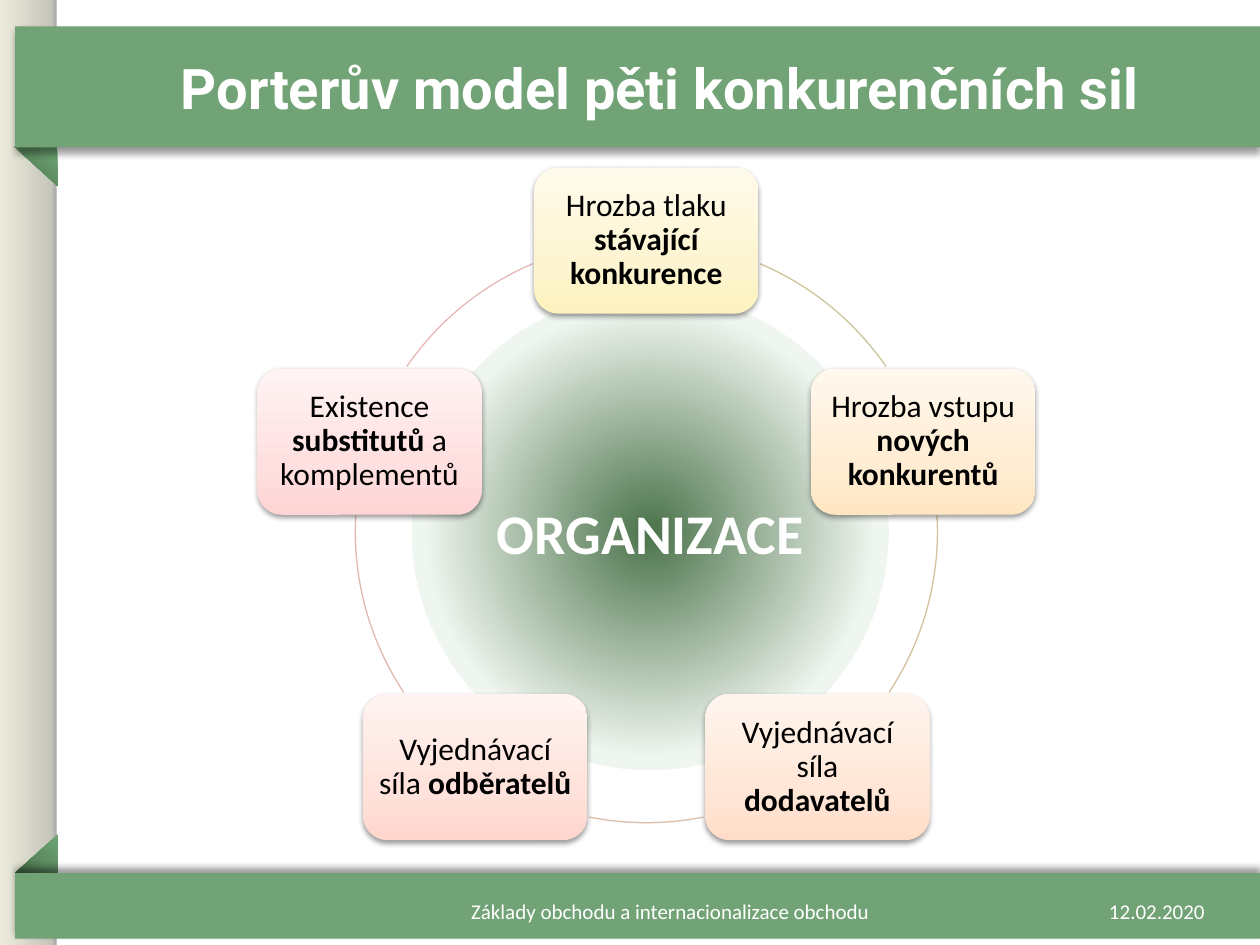
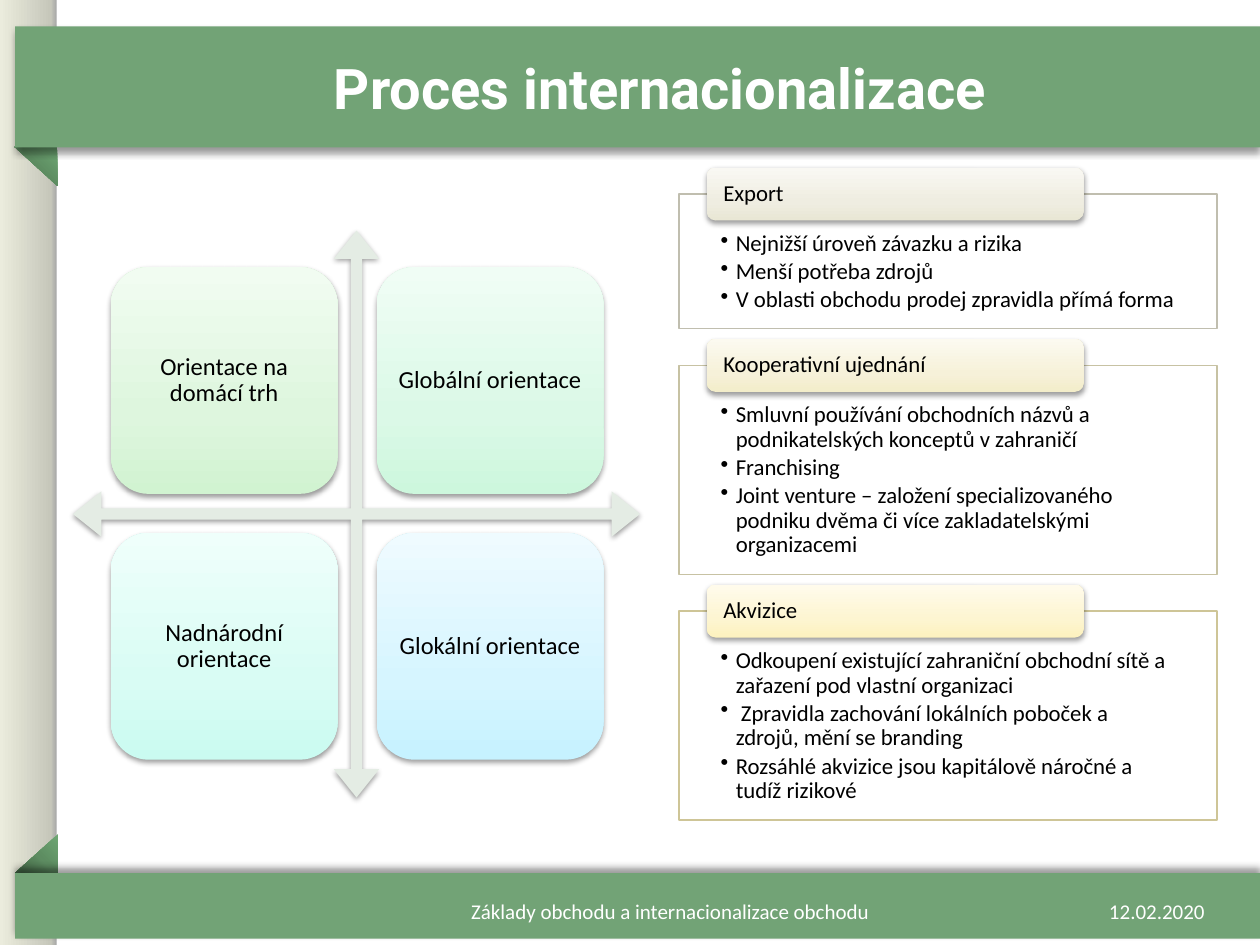
import math
from dataclasses import dataclass

import pptx
import pptx.util
import pptx.dml.color
import pptx.enum.shapes
import pptx.enum.text
import pptx.oxml
import pptx.oxml.ns

Inches = pptx.util.Inches
SHAPE = pptx.enum.shapes.MSO_SHAPE
ALIGN = pptx.enum.text.PP_ALIGN
ANCHOR = pptx.enum.text.MSO_ANCHOR

# ---------- Content ----------
FOOTER = "Základy obchodu a internacionalizace obchodu"
DATE = "12.02.2020"

FORCES_TITLE = "Porterův model pěti konkurenčních sil"
ORGANIZATION = "ORGANIZACE"
# Clockwise from the top; *bold*; gradient from bottom to top
FORCES = [
    ("Hrozba tlaku *stávající konkurence*", ("FDF2BF", "FDF5D1", "FFFBEC")),
    ("Hrozba vstupu *nových konkurentů*", ("FFE6C2", "FFEDD3", "FFF8EE")),
    ("Vyjednávací síla *dodavatelů*", ("FFDDC8", "FFE6D7", "FFF5EF")),
    ("Vyjednávací síla *odběratelů*", ("FFD7CE", "FFE2DB", "FFF4F1")),
    ("Existence *substitutů* a komplementů", ("FFD4D4", "FFE0E0", "FFF3F3")),
]
# Visible pieces of the ring: start and end in degrees from the top, colour
RING_ARCS = [
    (22.9, 55.4, "CEC597"),
    (86.8, 123.5, "D5C19E"),
    (168.7, 191.3, "DCBDA6"),
    (236.5, 273.2, "E2B9AE"),
    (304.6, 337.1, "E8B7B7"),
]

PROCESS_TITLE = "Proces internacionalizace"
ORIENTATIONS = [
    ("Orientace na domácí trh", ("D1F3D1", "DEF6DE", "F1FCF1")),
    ("Globální orientace", ("CDF7DD", "DBF9E7", "F0FDF5")),
    ("Nadnárodní orientace", ("CAFBF1", "D9FCF4", "EFFFFB")),
    ("Glokální orientace", ("C6F2FF", "D6F5FF", "EFFBFF")),
]
# Label, label gradient, outline, panel height, points
ENTRY_FORMS = [
    ("Export", ("E9E7D5", "EFEDE1", "F9F8F3"), "C0BEAF", 1.07, [
        "Nejnižší úroveň závazku a rizika",
        "Menší potřeba zdrojů",
        "V oblasti obchodu prodej zpravidla přímá forma",
    ]),
    ("Kooperativní ujednání", ("F3EDCA", "F6F1D9", "FCFAF0"), "C7C2A3", 1.66, [
        "Smluvní používání obchodních názvů a podnikatelských konceptů v zahraničí",
        "Franchising",
        "Joint venture – založení specializovaného podniku dvěma či více "
        "zakladatelskými organizacemi",
    ]),
    ("Akvizice", ("FDF2BF", "FDF5D1", "FFFBEC"), "CEC597", 1.66, [
        "Odkoupení existující zahraniční obchodní sítě a zařazení pod vlastní organizaci",
        " Zpravidla zachování lokálních poboček a zdrojů, mění se branding",
        "Rozsáhlé akvizice jsou kapitálově náročné a tudíž rizikové",
    ]),
]


# ---------- Theme ----------
@dataclass(frozen=True)
class Theme:
    title_font: str = "Roboto"
    body_font: str = "Calibri"
    title_size: int = 32
    force_size: int = 18
    orientation_size: int = 14
    form_size: int = 13
    footer_size: int = 12
    white: str = "FFFFFF"
    black: str = "000000"
    band: str = "72A376"
    arrows: str = "E4ECE4"
    spine: tuple = ((0, "A6A6A6"), (10, "C6C7BA"), (100, "EBECDD"))
    fold: tuple = ((0, "416344"), (50, "5D8C61"), (100, "6EA773"))
    core: tuple = ((0, "4B734B"), (67, "EFF5EF"), (100, "FFFFFF"))
    # Shadows: opacity %, blur pt, distance pt, direction in degrees
    band_shadow: tuple = (40, 4, 3, 90)
    footer_shadow: tuple = (40, 4, 3, 270)
    card_shadow: tuple = (38, 3.1, 1.6, 90)


THEME = Theme()


# ---------- Drawing helpers ----------
def rgb(value):
    return pptx.dml.color.RGBColor.from_string(value)


def xml(markup):
    head, rest = markup.split(" ", 1) if " " in markup.split(">")[0] else markup.split(">", 1)
    joint = " " if " " in markup.split(">")[0] else ">"
    return pptx.oxml.parse_xml(f"{head} {pptx.oxml.ns.nsdecls('a')}{joint}{rest}")


def set_gradient(shape, stops, angle=None, focus=None):
    """Linear at an angle, or circular around focus (left, top, right, bottom %)."""
    shape.fill.gradient()
    gradient = shape._element.spPr.find(pptx.oxml.ns.qn("a:gradFill"))
    gradient.clear()
    marks = "".join(f'<a:gs pos="{at * 1000}"><a:srgbClr val="{color}"/></a:gs>'
                    for at, color in stops)
    gradient.append(xml(f"<a:gsLst>{marks}</a:gsLst>"))
    if focus:
        sides = " ".join(f'{side}="{part * 1000}"' for side, part in zip("ltrb", focus))
        gradient.append(xml(f'<a:path path="circle"><a:fillToRect {sides}/></a:path>'))
    else:
        gradient.append(xml(f'<a:lin ang="{angle * 60000}" scaled="0"/>'))


def set_shadow(shape, shadow):
    opacity, blur, distance, direction = shadow
    shape._element.spPr.find(pptx.oxml.ns.qn("a:effectLst")).append(xml(
        f'<a:outerShdw blurRad="{int(blur * 12700)}" dist="{int(distance * 12700)}" '
        f'dir="{direction * 60000}" rotWithShape="0"><a:srgbClr val="{THEME.black}">'
        f'<a:alpha val="{opacity * 1000}"/></a:srgbClr></a:outerShdw>'))


def add_part(slide, kind, box, fill=None, line=None, shadow=None):
    part = slide.shapes.add_shape(kind, *map(Inches, box))
    part.shadow.inherit = False
    if fill:
        part.fill.solid()
        part.fill.fore_color.rgb = rgb(fill)
    if line:
        part.line.color.rgb = rgb(line)
        part.line.width = pptx.util.Pt(0.75)
    else:
        part.line.fill.background()
    if shadow:
        set_shadow(part, shadow)
    return part


def write(shape, texts, size, color=THEME.black, font=THEME.body_font, bold=None,
          align=ALIGN.CENTER, anchor=ANCHOR.MIDDLE, margins=None, spacing=None,
          bullets=False):
    """One paragraph per text; words between asterisks are bold."""
    frame = shape.text_frame
    frame.word_wrap = True
    frame.vertical_anchor = anchor
    if margins:
        (frame.margin_left, frame.margin_top,
         frame.margin_right, frame.margin_bottom) = map(Inches, margins)
    for index, text in enumerate(texts):
        paragraph = frame.add_paragraph() if index else frame.paragraphs[0]
        paragraph.alignment = align
        if spacing:
            paragraph.line_spacing = spacing
        if bullets:
            paragraph.space_after = pptx.util.Pt(2)
            properties = paragraph._p.get_or_add_pPr()
            properties.set("marL", str(Inches(0.12)))
            properties.set("indent", str(-Inches(0.12)))
            properties.append(xml('<a:buChar char="•"/>'))
        paragraph.font.name = font
        paragraph.font.size = pptx.util.Pt(size)
        paragraph.font.color.rgb = rgb(color)
        paragraph.font.bold = bold
        for position, words in enumerate(text.split("*")):
            if words:
                run = paragraph.add_run()
                run.text = words
                if position % 2:
                    run.font.bold = True


def add_card(slide, box, text, colors, size, margins, align=ALIGN.CENTER):
    card = add_part(slide, SHAPE.ROUNDED_RECTANGLE, box, shadow=THEME.card_shadow)
    set_gradient(card, zip((0, 35, 100), colors), angle=270)
    write(card, [text], size, align=align, margins=margins, spacing=0.9)


def add_label(slide, box, text, size, **style):
    label = slide.shapes.add_textbox(*map(Inches, box))
    write(label, [text], size, color=THEME.white, **style)


def add_base_slide(deck, title):
    """Spine, folded bands, title and footer."""
    slide = deck.slides.add_slide(deck.slide_layouts[6])
    spine = add_part(slide, SHAPE.RECTANGLE, (0, 0, 0.45, 7.5))
    set_gradient(spine, THEME.spine, angle=180)
    for box, rotation in (((0.13, 1.15, 0.31, 0.34), 270), ((0.12, 6.62, 0.34, 0.31), 0)):
        fold = add_part(slide, SHAPE.RIGHT_TRIANGLE, box)
        fold.rotation = rotation
        fold._element.spPr.xfrm.set("flipH", "1")
        set_gradient(fold, THEME.fold, focus=(0, 100, 100, 0))
    add_part(slide, SHAPE.RECTANGLE, (0.12, 0.21, 9.88, 0.96), THEME.band,
             shadow=THEME.band_shadow)
    add_part(slide, SHAPE.RECTANGLE, (0.12, 6.93, 9.88, 0.52), THEME.band,
             shadow=THEME.footer_shadow)
    add_label(slide, (0.87, 0.21, 8.74, 0.96), title, THEME.title_size,
              font=THEME.title_font, bold=True)
    add_label(slide, (7.33, 7.03, 2.33, 0.4), DATE, THEME.footer_size, align=ALIGN.RIGHT)
    add_label(slide, (3.46, 7.03, 3.72, 0.4), FOOTER, THEME.footer_size)
    return slide


# ---------- Slides ----------
def build_forces(deck):
    slide = add_base_slide(deck, FORCES_TITLE)
    center_x, center_y, radius = 5.13, 4.22, 2.31
    card_width, card_height = 1.78, 1.16

    def on_ring(degrees):
        angle = math.radians(degrees)
        return center_x + radius * math.sin(angle), center_y - radius * math.cos(angle)

    # Organization in the middle
    core = add_part(slide, SHAPE.OVAL, (3.27, 2.33, 3.78, 3.78))
    set_gradient(core, THEME.core, focus=(50, 50, 50, 50))
    write(core, [ORGANIZATION], THEME.title_size, color=THEME.white, bold=True)

    # Ring
    steps = 24
    for start, end, color in RING_ARCS:
        points = [tuple(map(Inches, on_ring(start + (end - start) * step / steps)))
                  for step in range(steps + 1)]
        builder = slide.shapes.build_freeform(*points[0])
        builder.add_line_segments(points[1:], close=False)
        arc = builder.convert_to_shape()
        arc.shadow.inherit = False
        arc.fill.background()
        arc.line.color.rgb = rgb(color)
        arc.line.width = pptx.util.Pt(0.75)

    # Forces, evenly spaced around the ring
    for index, (text, colors) in enumerate(FORCES):
        x, y = on_ring(index * 360 / len(FORCES))
        box = (x - card_width / 2, y - card_height / 2, card_width, card_height)
        add_card(slide, box, text, colors, THEME.force_size, (0.07,) * 4)


def build_process(deck):
    slide = add_base_slide(deck, PROCESS_TITLE)

    # Orientation matrix
    axes = add_part(slide, SHAPE.QUAD_ARROW, (0.58, 1.83, 4.5, 4.5), THEME.arrows,
                    shadow=THEME.card_shadow)
    for index, ratio in enumerate((0.02, 0.04, 0.05)):
        axes.adjustments[index] = ratio
    side, pitch = 1.8, 2.11
    for index, (text, colors) in enumerate(ORIENTATIONS):
        row, column = divmod(index, 2)
        box = (0.88 + column * pitch, 2.12 + row * pitch, side, side)
        add_card(slide, box, text, colors, THEME.orientation_size, (0.06,) * 4)

    # Forms of entry, stacked
    top, gap = 1.54, 0.29
    for label, colors, outline, height, points in ENTRY_FORMS:
        panel = add_part(slide, SHAPE.RECTANGLE, (5.39, top, 4.27, height), THEME.white, outline)
        write(panel, points, THEME.form_size, align=ALIGN.LEFT, anchor=ANCHOR.TOP,
              margins=(0.33, 0.3, 0.33, 0.1), spacing=0.9, bullets=True)
        add_card(slide, (5.61, top - 0.21, 2.99, 0.42), label, colors, THEME.form_size,
                 (0.11, 0, 0.11, 0), ALIGN.LEFT)
        top += height + gap


def main():
    deck = pptx.Presentation()
    deck.slide_width, deck.slide_height = Inches(10), Inches(7.5)
    build_forces(deck)
    build_process(deck)
    deck.save("out.pptx")


if __name__ == "__main__":
    main()
